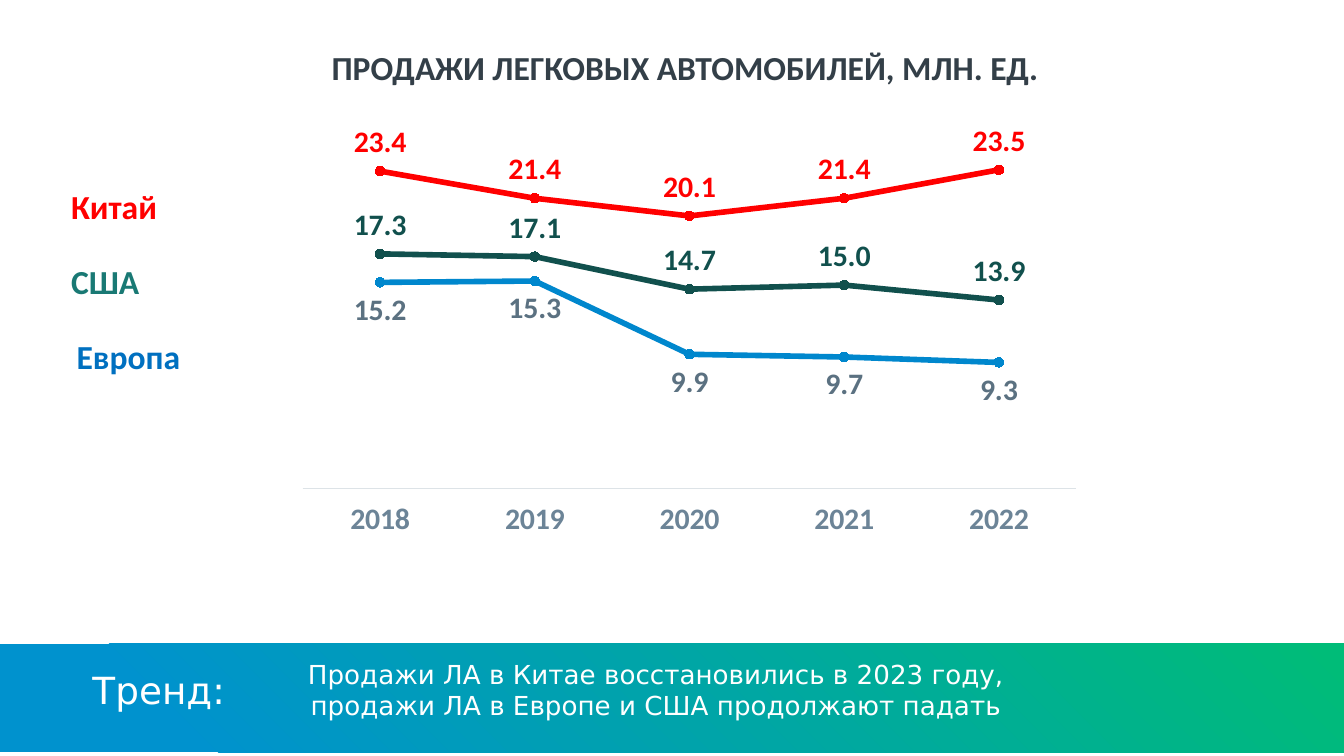
from lxml.etree import SubElement
from pptx import Presentation
from pptx.chart.data import CategoryChartData
from pptx.dml.color import RGBColor
from pptx.enum.chart import XL_CHART_TYPE, XL_LABEL_POSITION, XL_MARKER_STYLE, XL_TICK_LABEL_POSITION, XL_TICK_MARK
from pptx.enum.shapes import MSO_SHAPE
from pptx.enum.text import MSO_ANCHOR, PP_ALIGN
from pptx.oxml.ns import qn
from pptx.util import Pt

COLORS = {
    "white": "FFFFFF", "title": "333F48", "axis_text": "6C8497", "axis_line": "DDE3E7",
    "europe": "0087CD", "europe_label": "5B7181", "europe_name": "0070C0",
    "china": "FF0000", "usa": "11504D", "usa_name": "197974",
    "band_start": "0092CE", "band_end": "00BC78",
}
YEARS = ["2018", "2019", "2020", "2021", "2022"]
# name, values, line colour, label colour, label position
SALES = [
    ("Европа", [15.2, 15.3, 9.9, 9.7, 9.3], "europe", "europe_label", XL_LABEL_POSITION.BELOW),
    ("Китай", [23.4, 21.4, 20.1, 21.4, 23.5], "china", "china", XL_LABEL_POSITION.ABOVE),
    ("США", [17.3, 17.1, 14.7, 15.0, 13.9], "usa", "usa", XL_LABEL_POSITION.ABOVE),
]


def color(name):
    return RGBColor.from_string(COLORS[name])


def style_font(font, size, color_name, bold=True, face="Calibri"):
    font.name = face
    font.size = Pt(size)
    font.bold = bold
    font.color.rgb = color(color_name)


def write_lines(shape, lines, size, color_name, align=PP_ALIGN.LEFT, **font_options):
    frame = shape.text_frame
    frame.word_wrap = True
    frame.text = "\n".join(lines)
    for para in frame.paragraphs:
        para.alignment = align
        style_font(para.font, size, color_name, **font_options)


def add_text(page, box, lines, size, color_name, **options):
    text_box = page.shapes.add_textbox(*map(Pt, box))
    write_lines(text_box, lines, size, color_name, **options)


def add_rectangle(page, box):
    shape = page.shapes.add_shape(MSO_SHAPE.RECTANGLE, *map(Pt, box))
    shape.shadow.inherit = False
    return shape


def set_plot_area(chart, x, y, width, height):
    """Fix the inner plot area, in fractions of the chart."""
    plot_area = chart._chartSpace.chart.plotArea
    layout = plot_area.find(qn("c:layout"))
    if layout is None:
        layout = SubElement(plot_area, qn("c:layout"))
        plot_area.insert(0, layout)
    manual = SubElement(layout, qn("c:manualLayout"))
    settings = [("layoutTarget", "inner"), ("xMode", "edge"), ("yMode", "edge"),
                ("x", x), ("y", y), ("w", width), ("h", height)]
    for tag, value in settings:
        SubElement(manual, qn(f"c:{tag}")).set("val", str(value))


def add_sales_chart(page, box):
    data = CategoryChartData(number_format="0.0")
    data.categories = YEARS
    for name, values, *_ in SALES:
        data.add_series(name, values)
    chart = page.shapes.add_chart(XL_CHART_TYPE.LINE_MARKERS, *map(Pt, box), data).chart
    chart.has_legend = False
    chart.has_title = False
    style_font(chart.font, 10, "title", bold=False)
    set_plot_area(chart, 0.04, 0.05, 0.95, 0.7)

    years = chart.category_axis
    years.major_tick_mark = XL_TICK_MARK.NONE
    years.tick_label_position = XL_TICK_LABEL_POSITION.LOW
    years.format.line.color.rgb = color("axis_line")
    years.format.line.width = Pt(0.75)
    style_font(years.tick_labels.font, 16, "axis_text")

    amounts = chart.value_axis
    amounts.minimum_scale, amounts.maximum_scale = 0, 25
    amounts.has_major_gridlines = False
    amounts.visible = False

    chart.plots[0].vary_by_categories = False
    for series, (_, _, line_color, label_color, position) in zip(chart.plots[0].series, SALES):
        series.smooth = False
        series.format.line.color.rgb = color(line_color)
        series.format.line.width = Pt(3)
        marker = series.marker
        marker.style = XL_MARKER_STYLE.CIRCLE
        marker.size = 5
        marker.format.fill.solid()
        marker.format.fill.fore_color.rgb = color(line_color)
        marker.format.line.color.rgb = color(line_color)
        labels = series.data_labels
        labels.show_value = True
        labels.number_format = "0.0"
        labels.number_format_is_linked = False
        labels.position = position
        style_font(labels.font, 16, label_color)


def add_country_names(page, box):
    left, top, width, height = box
    row_step = 40
    rows = [("Китай", "china", 0), ("США", "usa_name", 0), ("Европа", "europe_name", 3)]
    for row, (name, color_name, indent) in enumerate(rows):
        label = add_rectangle(page, (left + indent, top + row * row_step, width, height))
        label.fill.solid()
        label.fill.fore_color.rgb = color("white")
        label.line.color.rgb = color("white")
        label.text_frame.vertical_anchor = MSO_ANCHOR.MIDDLE
        write_lines(label, [name], 18, color_name)


def add_trend_band(page, box):
    left, top, width, height = box
    band = add_rectangle(page, box)
    band.line.fill.background()
    band.fill.gradient()
    band.fill.gradient_angle = 45
    for stop, name, position in zip(band.fill.gradient_stops, ("band_start", "band_end"), (0.13, 0.99)):
        stop.color.rgb = color(name)
        stop.position = position
    plain = {"bold": False, "face": "DejaVu Sans"}
    add_text(page, (left + 31, top + 4, 641, 41),
             ["Продажи ЛА в Китае восстановились в 2023 году,",
              "продажи ЛА в Европе и США продолжают падать"],
             14, "white", align=PP_ALIGN.CENTER, **plain)
    add_text(page, (left + 42.5, top + 9, 150, 32), ["Тренд:"], 20, "white", **plain)


def main():
    deck = Presentation()
    deck.slide_width, deck.slide_height = Pt(720), Pt(405)
    page = deck.slides.add_slide(deck.slide_layouts[6])
    add_sales_chart(page, (144.7, 66.2, 436.3, 260.6))
    add_country_names(page, (31, 99, 78, 23))
    add_text(page, (170.6, 21.6, 473, 29), ["ПРОДАЖИ ЛЕГКОВЫХ АВТОМОБИЛЕЙ, МЛН. ЕД."], 18, "title")
    add_trend_band(page, (0, 345, 720, 58))
    deck.save("out.pptx")


if __name__ == "__main__":
    main()
